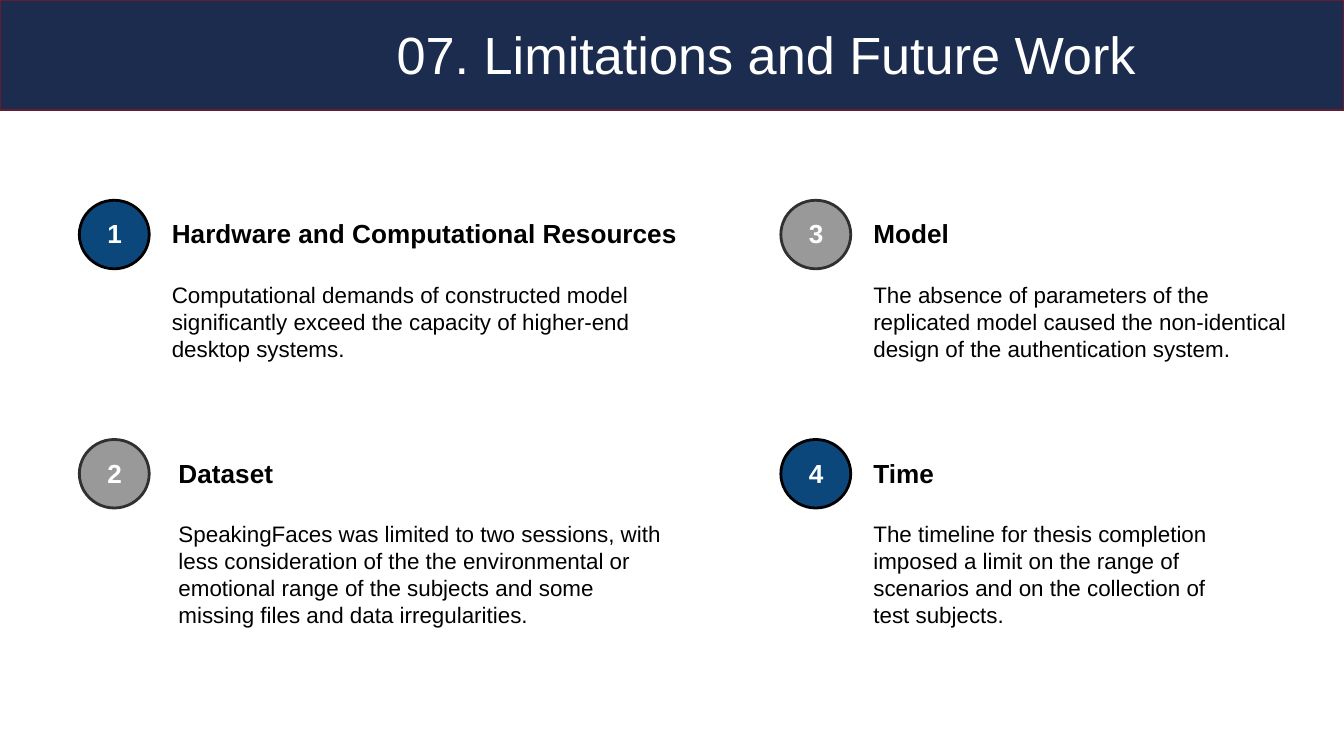
from pptx import Presentation
from pptx import util as u
from pptx.dml.color import RGBColor
from pptx.enum import shapes, text


def colour(value):
    return RGBColor.from_string(value)


class SlideBuilder:
    font = "Arial"
    ink = "000000"
    white = "FFFFFF"
    navy = "1C2C4E"
    blue = ("0C477B", "000000")
    grey = ("999999", "303030")
    heading = {"size": u.Pt(14), "bold": True}
    body = {"size": u.Pt(12), "bold": False}

    def __init__(self, deck):
        self.page = deck.slides.add_slide(deck.slide_layouts[6])
        background = self.page.background.fill
        background.solid()
        background.fore_color.rgb = colour("212121")

    def shape(self, kind, place, fill, line, weight):
        item = self.page.shapes.add_shape(kind, *map(u.Inches, place))
        item.shadow.inherit = False
        item.fill.solid()
        item.fill.fore_color.rgb = colour(fill)
        item.line.color.rgb = colour(line)
        item.line.width = u.Pt(weight)

    def text(self, place, words, style, ink=ink, align=text.PP_ALIGN.LEFT, inset=0.1):
        box = self.page.shapes.add_textbox(*map(u.Inches, place))
        frame = box.text_frame
        layout = {
            "word_wrap": True,
            "margin_left": u.Inches(0.1),
            "margin_right": u.Inches(0.1),
            "margin_top": u.Inches(inset),
            "margin_bottom": u.Inches(inset),
        }
        for name, value in layout.items():
            setattr(frame, name, value)
        para = frame.paragraphs[0]
        para.alignment = align
        span = para.add_run()
        span.text = words
        for name, value in {"name": self.font, **style}.items():
            setattr(span.font, name, value)
        span.font.color.rgb = colour(ink)

    def badge(self, left, top, number, colours):
        circle = shapes.MSO_SHAPE.FLOWCHART_CONNECTOR
        self.shape(circle, (left, top, 0.52, 0.51), *colours, 1.5)
        self.text((left + 0.11, top + 0.03, 0.23, 0.44), str(number),
                  self.heading, self.white)

    def point(self, number, left, top, colours, indent, title, title_width,
              words, width, height):
        self.badge(left, top, number, colours)
        self.text((left + indent, top + 0.03, title_width, 0.44), title, self.heading)
        self.text((left + indent, top + 0.5, width, height), words, self.body)


def main():
    deck = Presentation()
    deck.slide_width = u.Inches(10)
    deck.slide_height = u.Inches(10) * 9 // 16
    slide = SlideBuilder(deck)

    rectangle = shapes.MSO_SHAPE.RECTANGLE
    slide.shape(rectangle, (0, 0.83, 10, 4.8), slide.white, slide.white, 2)
    slide.shape(rectangle, (0, 0, 10, 0.82), slide.navy, "651D32", 0.75)
    slide.text((2.18, 0.12, 7.04, 0.57), "07. Limitations and Future Work",
               {"size": u.Pt(28)}, slide.white, text.PP_ALIGN.CENTER, 0.05)

    columns = (0.59, 5.81)
    rows = ((1.49, 0.81), (3.27, 1.01))
    points = (
        (slide.blue, 0.59, "Hardware and Computational Resources", 4.21,
         "Сomputational demands of constructed model significantly exceed "
         "the capacity of higher-end desktop systems.", 3.82),
        (slide.grey, 0.64, "Dataset", 2.56,
         "SpeakingFaces was limited to two sessions, with less consideration "
         "of the the environmental or emotional range of the subjects and "
         "some missing files and data irregularities.", 3.83),
        (slide.grey, 0.59, "Model", 3.47,
         "The absence of parameters of the replicated model caused the "
         "non-identical design of the authentication system.", 3.33),
        (slide.blue, 0.59, "Time", 3.33,
         "The timeline for thesis completion imposed a limit on the range of "
         "scenarios and on the collection of test subjects.", 2.89),
    )
    for index, details in enumerate(points):
        column, row = divmod(index, len(rows))
        top, height = rows[row]
        slide.point(index + 1, columns[column], top, *details, height)

    deck.save("out.pptx")


if __name__ == "__main__":
    main()
